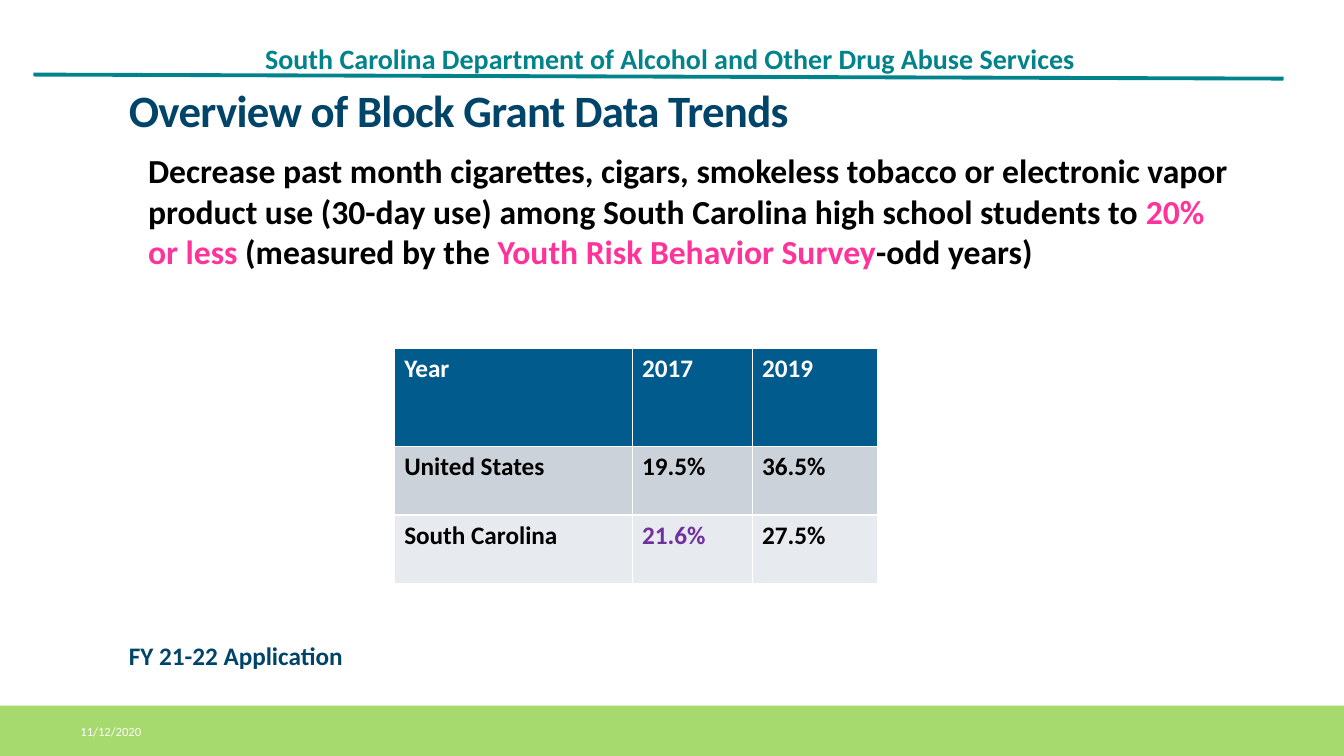
from pptx import Presentation
from pptx.dml.color import RGBColor
from pptx.enum.shapes import MSO_CONNECTOR, MSO_SHAPE
from pptx.enum.text import MSO_ANCHOR
from pptx.oxml.ns import qn
from pptx.util import Inches, Pt
from lxml import etree

STRAIGHT = MSO_CONNECTOR.STRAIGHT
RECT = MSO_SHAPE.RECTANGLE
TOP, MIDDLE = MSO_ANCHOR.TOP, MSO_ANCHOR.MIDDLE

FONT = "Calibri"
TEAL, NAVY, GREEN = "00838B", "014469", "A6D96E"
PINK, PURPLE, BLACK, WHITE = "FF3399", "7030A0", "000000", "FFFFFF"
ROW_FILLS = ["015B8C", "CCD2DA", "E7EAEE"]


def rgb(color):
    return RGBColor.from_string(color)


def write(tf, runs, size=18, color=BLACK, bold=True, line=None, track=None):
    """Fill a text frame with a string, or with (text, color) runs."""
    p = tf.paragraphs[0]
    if line:
        p.line_spacing = line
    for text, run_color in [(runs, color)] if isinstance(runs, str) else runs:
        r = p.add_run()
        r.text = text
        r.font.name, r.font.size, r.font.bold = FONT, Pt(size), bold
        r.font.color.rgb = rgb(run_color)
        if track:
            r.font._element.set("spc", str(int(track * 100)))


def text_box(s, box, runs, anchor=TOP, wrap=True, **fmt):
    tf = s.shapes.add_textbox(*map(Inches, box)).text_frame
    tf.word_wrap, tf.vertical_anchor = wrap, anchor
    write(tf, runs, **fmt)
    return tf


def header(s, x, y, w, h):
    # Department name
    tf = text_box(s, (x + 2.23, y, 10.21, h),
                  "South Carolina Department of Alcohol and Other Drug Abuse Services",
                  anchor=MIDDLE, size=20, color=TEAL, line=0.9)
    tf.margin_left = tf.margin_right = Inches(0.07)
    tf.margin_top = tf.margin_bottom = Inches(0.04)
    # Slightly sloping rule
    rule = s.shapes.add_connector(STRAIGHT, Inches(x), Inches(y + 0.46),
                                  Inches(x + w), Inches(y + 0.5))
    rule.line.color.rgb, rule.line.width = rgb(TEAL), Pt(2.75)
    etree.SubElement(rule._element.spPr, qn("a:effectLst"))


def footer(s, x, y, w, h):
    band = s.shapes.add_shape(RECT, *map(Inches, (x, y, w, h)))
    band.shadow.inherit = False
    band.fill.solid()
    band.fill.fore_color.rgb = rgb(GREEN)
    band.line.fill.background()
    text_box(s, (x + 0.7, y + 0.06, 2.7, 0.4), "11/12/2020",
             anchor=MIDDLE, size=9, color=WHITE, bold=False)


def goal(s, x, y, w, h):
    # Title, goal statement and application year
    text_box(s, (x, y, w, 0.67), "Overview of Block Grant Data Trends",
             size=32, color=NAVY, line=0.85, track=-0.5)
    text_box(s, (x + 0.19, y + 0.59, w, 1.88), [
        ("Decrease past month cigarettes, cigars, smokeless tobacco or electronic "
         "vapor product use (30-day use) among South Carolina high school "
         "students to ", BLACK),
        ("20% or less ", PINK),
        ("(measured by the ", BLACK),
        ("Youth Risk Behavior Survey", PINK),
        ("-odd years)", BLACK),
    ], size=24)
    text_box(s, (x, y + h - 0.4, 2.34, 0.4), "FY 21-22 Application",
             wrap=False, color=NAVY)


def rates_table(s, x, y, w, h):
    rows = [["Year", "2017", "2019"],
            ["United States", "19.5%", "36.5%"],
            ["South Carolina", "21.6%", "27.5%"]]
    table = s.shapes.add_table(3, 3, *map(Inches, (x, y, w, h))).table
    for col, width in zip(table.columns, (2.36, 1.19, 1.24)):
        col.width = Inches(width)
    for row, height in zip(table.rows, (0.97, 0.68, 0.68)):
        row.height = Inches(height)
    for i, row in enumerate(rows):
        for j, value in enumerate(row):
            cell = table.cell(i, j)
            cell.fill.solid()
            cell.fill.fore_color.rgb = rgb(ROW_FILLS[i])
            color = WHITE if i == 0 else PURPLE if value == "21.6%" else BLACK
            write(cell.text_frame, value, color=color)


def main():
    prs = Presentation()
    prs.slide_width, prs.slide_height = Inches(13.33), Inches(7.5)
    s = prs.slides.add_slide(prs.slide_layouts[6])
    header(s, 0.33, 0.28, 12.4, 0.63)
    footer(s, 0, 7, 13.33, 0.5)
    rates_table(s, 3.91, 3.46, 4.79, 2.33)
    goal(s, 1.18, 0.85, 11, 5.85)
    prs.save("out.pptx")


if __name__ == "__main__":
    main()
